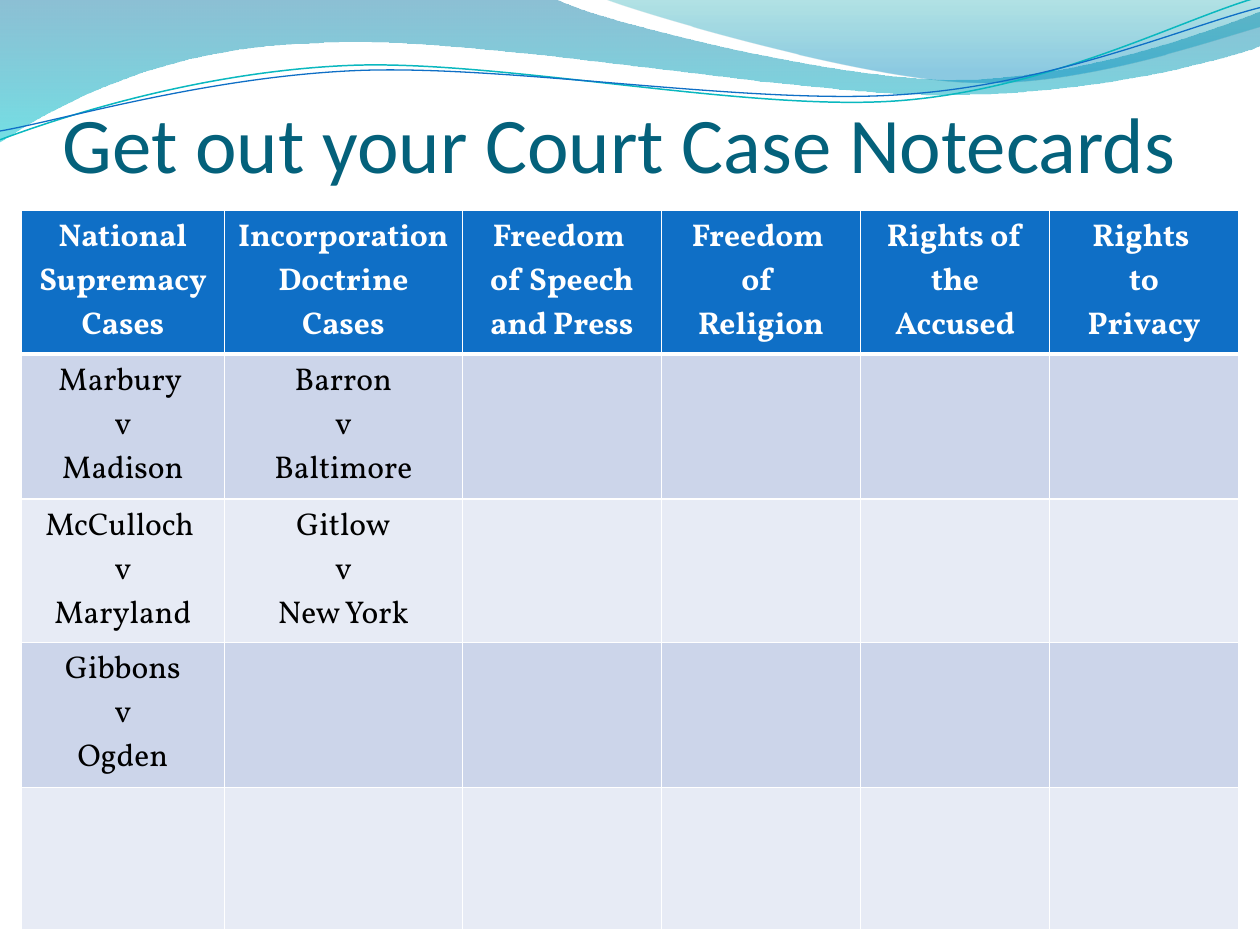
"""Build a slide with a wave banner and a table of court cases."""
import math
import pptx
import pptx.util
import pptx.dml.color
import pptx.enum.text
import pptx.oxml.ns
import lxml.etree

Inches = pptx.util.Inches
Pt = pptx.util.Pt
qn = pptx.oxml.ns.qn
sub = lxml.etree.SubElement
align = pptx.enum.text.PP_ALIGN
anchor = pptx.enum.text.MSO_ANCHOR


def color(code):
    return pptx.dml.color.RGBColor.from_string(code)


def place(x, y, box, turn):
    left, top, width, height = box
    dx = x - left - width / 2
    dy = y - top - height / 2
    sine, cosine = math.sin(math.radians(-turn)), math.cos(math.radians(turn))
    return (Inches(dx * cosine - dy * sine + width / 2),
            Inches(dx * sine + dy * cosine + height / 2))


deck = pptx.Presentation()
deck.slide_width = Inches(10)
deck.slide_height = Inches(7.5)
slide = deck.slides.add_slide(deck.slide_layouts[6])
shapes = slide.shapes

waves = [
    {"box": (-0.01, -0.01, 10.02, 1.14), "turn": 0, "start": (0, 0),
     "stops": [(0, "0074A1", 45), (1, "00C6CF", 55)],
     "steps": [(4.4, -0.01), (4.76, 0.17, 6.64, 0.63, 7.58, 0.63),
               (8.53, 0.63, 9.58, 0.26, 10, 0.09), (10.01, 0.36),
               (9.83, 0.44, 8.7, 0.76, 7.46, 0.75),
               (6.22, 0.75, 3.82, 0.28, 2.57, 0.34),
               (1.29, 0.36, 0.46, 0.83, -0.01, 1.13), (0, 0)]},
    {"box": (4.79, -0.01, 5.21, 0.7), "turn": 0, "start": (4.79, -0.01),
     "stops": [(0, "00A1A9", 30), (0.8, "008BBF", 45)],
     "steps": [(5.09, 0.11, 6.82, 0.62, 7.69, 0.65),
               (8.56, 0.69, 9.61, 0.32, 10, 0.21), (10, 0), (4.79, -0.01)]},
    {"box": (-0.02, 0.22, 10.02, 0.71), "turn": -2.7, "start": (0, 1.11),
     "line": ("0AB8BF", 0.85),
     "steps": [(0.48, 0.93, 1.58, 0.57, 2.77, 0.52),
               (3.95, 0.47, 5.93, 0.89, 7.13, 0.8),
               (8.33, 0.71, 9.38, 0.15, 9.98, -0.02)]},
    {"box": (-0.02, 0.3, 10.03, 0.58), "turn": -2.7, "start": (0, 1.04),
     "line": ("0F6FC6", 0.75),
     "steps": [(0.47, 0.96, 1.64, 0.61, 2.83, 0.56),
               (4.03, 0.51, 5.97, 0.84, 7.17, 0.75),
               (8.36, 0.67, 9.41, 0.21, 10, 0.06)]},
]
for wave in waves:
    box, turn = wave["box"], wave["turn"]
    pen = shapes.build_freeform(0, 0)
    pen.add_line_segments([(Inches(1), Inches(1))], close=False)
    shape = pen.convert_to_shape()
    for name, value in zip(("left", "top", "width", "height"), box):
        setattr(shape, name, Inches(value))
    shape.rotation = turn
    shape.shadow.inherit = False
    route = next(shape._element.iter(qn("a:path")))
    for part in list(route):
        route.remove(part)
    route.set("w", str(Inches(box[2])))
    route.set("h", str(Inches(box[3])))
    for i, step in enumerate([wave["start"]] + wave["steps"]):
        kind = "moveTo" if i == 0 else "lnTo" if len(step) == 2 else "cubicBezTo"
        part = sub(route, qn("a:" + kind))
        for x, y in zip(step[::2], step[1::2]):
            x, y = place(x, y, box, turn)
            sub(part, qn("a:pt"), x=str(x), y=str(y))
    if "line" in wave:
        shape.fill.background()
        shape.line.color.rgb = color(wave["line"][0])
        shape.line.width = Pt(wave["line"][1])
        continue
    sub(route, qn("a:close"))
    shape.line.fill.background()
    shape.fill.gradient()
    shape.fill.gradient_angle = 270
    for stop, (spot, code, _) in zip(shape.fill.gradient_stops, wave["stops"]):
        stop.position = spot
        stop.color.rgb = color(code)
    for tint, (_, _, alpha) in zip(shape._element.iter(qn("a:srgbClr")), wave["stops"]):
        sub(tint, qn("a:alpha"), val=str(alpha * 1000))

title = shapes.add_textbox(Inches(0.5), Inches(0.25), Inches(9), Inches(1.25))
frame = title.text_frame
look = {"word_wrap": True, "vertical_anchor": anchor.BOTTOM, "margin_left": 0,
        "margin_right": 0, "margin_top": Inches(0.05), "margin_bottom": 0}
for name, value in look.items():
    setattr(frame, name, value)
frame.text = "Get out your Court Case Notecards"
font = frame.paragraphs[0].runs[0].font
font.color.rgb = color("04617B")
for name, value in {"name": "Calibri", "size": Pt(45)}.items():
    setattr(font, name, value)

rows = [
    ["National Supremacy Cases", "Incorporation Doctrine Cases",
     "Freedom \vof Speech and Press", "Freedom \vof \vReligion",
     "Rights of the Accused", "Rights \nto\nPrivacy"],
    ["Marbury \nv\nMadison", "Barron\nv\nBaltimore"],
    ["McCulloch \nv\nMaryland", "Gitlow\nv\nNew York"],
    ["Gibbons\nv\nOgden"],
    [],
]
wide = [1.61, 1.89, 1.58, 1.58, 1.5, 1.5]
high = [1.14, 1.15, 1.14, 1.15, 1.13]
table = shapes.add_table(len(rows), len(wide), Inches(0.17), Inches(1.67),
                         Inches(sum(wide)), Inches(sum(high))).table
for col, width in zip(table.columns, wide):
    col.width = Inches(width)
for r, texts in enumerate(rows):
    table.rows[r].height = Inches(high[r])
    head = r == 0
    back = "0F6FC6" if head else ("E7EBF5", "CCD5EA")[r % 2]
    style = {"name": "Vollkorn", "size": Pt(18), "bold": head}
    edges = {"L": 1, "R": 1, "T": 3 if r == 1 else 1, "B": 3 if head else 1}
    for c in range(len(wide)):
        cell = table.cell(r, c)
        cell.fill.solid()
        cell.fill.fore_color.rgb = color(back)
        props = cell._tc.get_or_add_tcPr()
        for i, (side, size) in enumerate(edges.items()):
            edge = lxml.etree.Element(qn("a:ln" + side), w=str(Pt(size)))
            solid = sub(edge, qn("a:solidFill"))
            sub(solid, qn("a:srgbClr"), val="FFFFFF")
            props.insert(i, edge)
        if c >= len(texts):
            continue
        cell.text = texts[c]
        for para in cell.text_frame.paragraphs:
            para.alignment = align.CENTER
            for run in para.runs:
                run.font.color.rgb = color("FFFFFF" if head else "000000")
                for name, value in style.items():
                    setattr(run.font, name, value)

deck.save("out.pptx")
